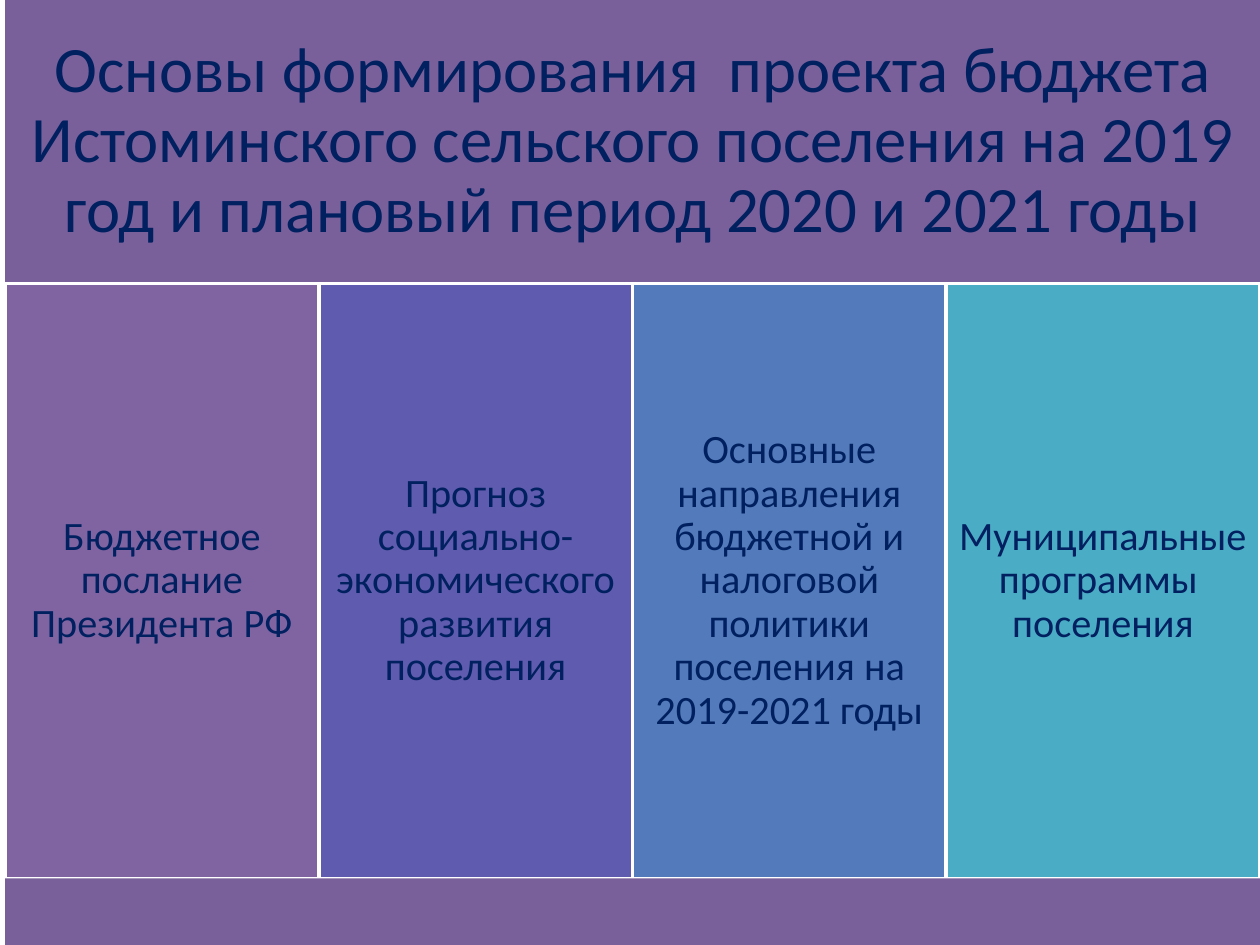
from pptx import Presentation
from pptx.dml.color import RGBColor
from pptx.enum.shapes import MSO_SHAPE as Shape
from pptx.enum.text import MSO_ANCHOR as Anchor, PP_ALIGN as Align
from pptx.util import Pt

FONT, INK, BAND, WHITE = "Calibri", "002060", "7A609B", "FFFFFF"
BASES = [
    ("Бюджетное послание Президента РФ", "8064A2"),
    ("Прогноз социально-экономического развития поселения", "5F5BAE"),
    ("Основные направления бюджетной и налоговой политики поселения на 2019-2021 годы", "537ABA"),
    ("Муниципальные программы  поселения", "4BACC6"),
]


def paint(form, tone):
    """Set a solid colour on a fill."""
    form.solid()
    form.fore_color.rgb = RGBColor.from_string(tone)


def add_block(slide, box, tone, edge=None):
    """Draw a flat rectangle, with an outline if an edge colour is given."""
    block = slide.shapes.add_shape(Shape.RECTANGLE, *map(Pt, box))
    block.shadow.inherit = False
    paint(block.fill, tone)
    if edge:
        paint(block.line.fill, edge)
        block.line.width = Pt(2)
    else:
        block.line.fill.background()
    return block


def write(block, text, size, inset):
    """Write one centred paragraph in a block."""
    frame = block.text_frame
    frame.word_wrap = True
    frame.vertical_anchor = Anchor.MIDDLE
    frame.margin_left = frame.margin_right = Pt(inset)
    frame.margin_top = frame.margin_bottom = Pt(inset)
    para = frame.paragraphs[0]
    para.alignment = Align.CENTER
    para.line_spacing = 0.9
    run = para.add_run()
    run.text = text
    run.font.name, run.font.size = FONT, Pt(size)
    paint(run.font.fill, INK)


def add_title(slide, box):
    """Draw the heading band."""
    text = ("Основы формирования  проекта бюджета Истоминского сельского "
            "поселения на 2019 год и плановый период 2020 и 2021 годы")
    write(add_block(slide, box, BAND), text, 37, 11)


def add_bases(slide, box):
    """Split the box into equal columns, one for each budget basis."""
    left, top, width, height = box
    step = width / len(BASES)
    for i, (text, tone) in enumerate(BASES):
        cell = (left + i * step, top, step, height)
        write(add_block(slide, cell, tone, WHITE), text, 23, 7)


def main():
    """Build and save the slide."""
    deck = Presentation()
    deck.slide_width, deck.slide_height = Pt(720), Pt(540)
    slide = deck.slides.add_slide(deck.slide_layouts[6])
    left, width = 3, 717
    add_title(slide, (left, 0, width, 162))
    add_bases(slide, (left, 162, width, 340))
    add_block(slide, (left, 502, width, 38), BAND)
    deck.save("out.pptx")


if __name__ == "__main__":
    main()
